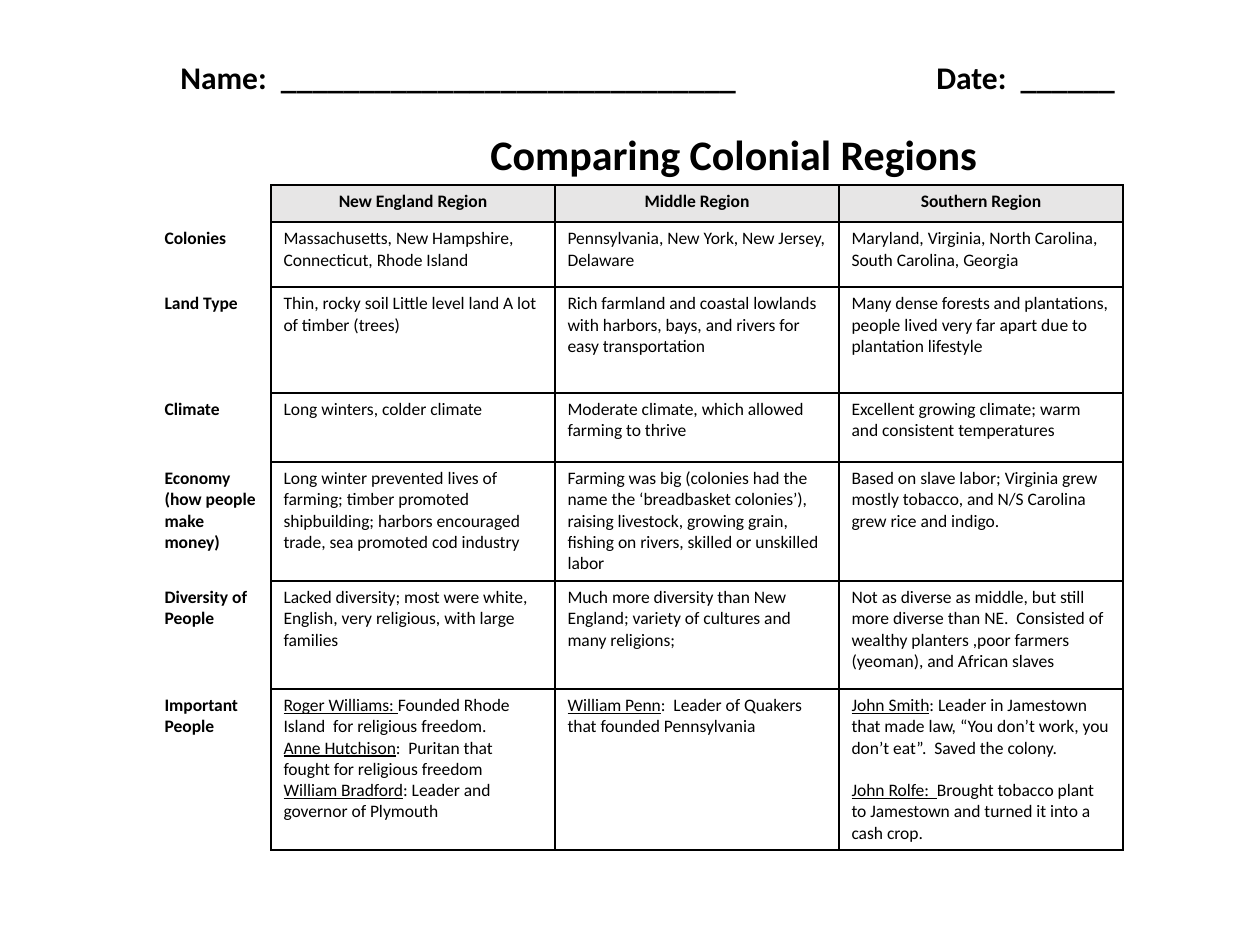
from lxml.etree import SubElement
from pptx import Presentation
from pptx.dml.color import RGBColor
from pptx.enum.text import MSO_AUTO_SIZE as FIT, PP_ALIGN as ALIGN
from pptx.oxml.ns import qn
from pptx.util import Emu, Pt

SCALE = 914400 / 126
BLACK = RGBColor(0x00, 0x00, 0x00)
WHITE = RGBColor(0xFF, 0xFF, 0xFF)
GREY = RGBColor(0xE7, 0xE6, 0xE6)
PLAIN_STYLE = "{2D5ABB26-0587-4C30-8999-92F81FD0307C}"

COLUMN_WIDTHS = [119, 284, 284, 284]
ROW_HEIGHTS = [37, 65, 106, 69, 119, 108, 161]
REGIONS = [
    ["", "New England Region", "Middle Region", "Southern Region"],
    ["Colonies",
     "Massachusetts, New Hampshire, Connecticut, Rhode Island",
     "Pennsylvania, New York, New Jersey, Delaware",
     "Maryland, Virginia, North Carolina, South Carolina, Georgia"],
    ["Land Type",
     "Thin, rocky soil Little level land A lot of timber (trees)",
     "Rich farmland and coastal lowlands with harbors, bays, and rivers for easy transportation",
     "Many dense forests and plantations, people lived very far apart due to plantation lifestyle"],
    ["Climate",
     "Long winters, colder climate",
     "Moderate climate, which allowed farming to thrive",
     "Excellent growing climate; warm and consistent temperatures"],
    ["Economy (how people make money)",
     "Long winter prevented lives of farming; timber promoted shipbuilding; "
     "harbors encouraged trade, sea promoted cod industry",
     "Farming was big (colonies had the name the ‘breadbasket colonies’), raising livestock, "
     "growing grain, ﬁshing on rivers, skilled or unskilled labor",
     "Based on slave labor; Virginia grew mostly tobacco, and N/S Carolina grew rice and indigo."],
    ["Diversity of People",
     "Lacked diversity; most were white, English, very religious, with large families",
     "Much more diversity than New England; variety of cultures and many religions;",
     "Not as diverse as middle, but still more diverse than NE.  Consisted of wealthy planters "
     ",poor farmers (yeoman), and African slaves"],
    ["Important People",
     [("Roger Williams: ", "Founded Rhode Island  for religious freedom."),
      ("Anne Hutchison", ":  Puritan that fought for religious freedom"),
      ("William Bradford", ": Leader and governor of Plymouth")],
     [("William Penn", ":  Leader of Quakers that founded Pennsylvania")],
     [("John Smith", ": Leader in Jamestown that made law, “You don’t work, you don’t eat”.  "
       "Saved the colony."),
      ("John Rolfe:  ", "Brought tobacco plant to Jamestown and turned it into a cash crop.")]],
]


def px(n):
    """Turn whole pixels into EMU."""
    return Emu(round(n * SCALE))


def add_run(p, text, size, bold=False, underline=False):
    """Add one formatted run to a paragraph."""
    r = p.add_run()
    r.text = text
    style = {"name": "Calibri", "size": Pt(size), "bold": bold, "underline": underline}
    for key, value in style.items():
        setattr(r.font, key, value)
    r.font.color.rgb = BLACK


def add_line(slide, box, text, size, wrap, tab=None):
    """Place one bold line of text in a box, with an optional tab stop."""
    tf = slide.shapes.add_textbox(*map(px, box)).text_frame
    tf.word_wrap = wrap
    tf.auto_size = FIT.SHAPE_TO_FIT_TEXT
    p = tf.paragraphs[0]
    if tab:
        tabs = SubElement(p._p.get_or_add_pPr(), qn("a:tabLst"))
        SubElement(tabs, qn("a:tab"), pos=str(px(tab)), algn="l")
    add_run(p, text, size, bold=True)


def add_borders(cell, sides):
    """Draw black one-point borders on the given sides of a cell."""
    for side in sides:
        ln = SubElement(cell._tc.get_or_add_tcPr(), qn(f"a:ln{side}"), w=str(Pt(1)))
        fill = SubElement(ln, qn("a:solidFill"))
        SubElement(fill, qn("a:srgbClr"), val=str(BLACK))


def fill_cell(cell, content, bold, align, gap):
    """Write plain text, or paragraphs that open with an underlined name."""
    tf = cell.text_frame
    if not content:
        SubElement(tf.paragraphs[0]._p, qn("a:endParaRPr"), sz="1000")
        return
    paragraphs = [("", content)] if isinstance(content, str) else content
    for i, (name, text) in enumerate(paragraphs):
        p = tf.add_paragraph() if i else tf.paragraphs[0]
        p.alignment = align
        if i and gap:
            p.space_before = Pt(gap)
        if name:
            add_run(p, name, 10, bold, underline=True)
        add_run(p, text, 10, bold)


def add_region_table(slide, left, top):
    """Build the comparison table with its row labels outside the grid."""
    size = sum(COLUMN_WIDTHS), sum(ROW_HEIGHTS)
    table = slide.shapes.add_table(len(ROW_HEIGHTS), len(COLUMN_WIDTHS),
                                   *map(px, (left, top, *size))).table
    table.first_row = table.horz_banding = False
    table._tbl.tblPr.find(qn("a:tableStyleId")).text = PLAIN_STYLE
    for column, width in zip(table.columns, COLUMN_WIDTHS):
        column.width = px(width)
    for i, (height, contents) in enumerate(zip(ROW_HEIGHTS, REGIONS)):
        table.rows[i].height = px(height)
        for j, content in enumerate(contents):
            cell = table.cell(i, j)
            header = i == 0
            add_borders(cell, "LRTB" if j else "R")
            if j:
                cell.fill.solid()
                cell.fill.fore_color.rgb = GREY if header else WHITE
            else:
                cell.fill.background()
            fill_cell(cell, content, header or j == 0,
                      ALIGN.CENTER if header else ALIGN.LEFT, 12.2 if j == 3 else 0)


def main():
    """Build and save the worksheet slide."""
    prs = Presentation()
    prs.slide_width, prs.slide_height = px(1260), px(945)
    s = prs.slides.add_slide(prs.slide_layouts[6])
    add_region_table(s, 152, 185)
    add_line(s, (478, 122, 615, 63), "Comparing Colonial Regions", 24, True)
    add_line(s, (168, 52, 968, 50), "Name:  " + "_" * 29 + "\tDate:  " + "_" * 6,
             18, False, tab=756)
    prs.save("out.pptx")


if __name__ == "__main__":
    main()
